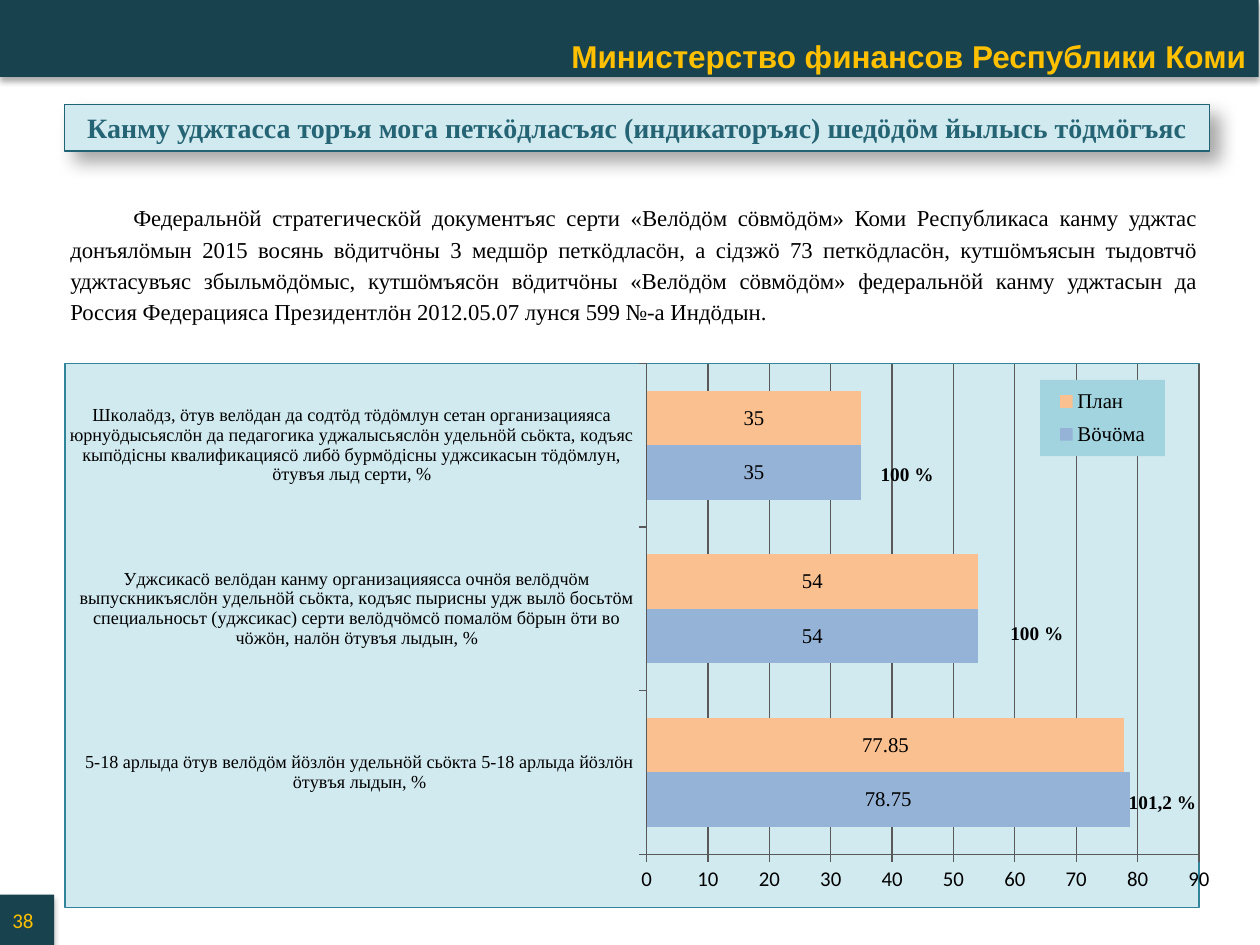
from dataclasses import dataclass

from lxml.etree import SubElement
from pptx import Presentation
from pptx.chart.data import CategoryChartData
from pptx.dml.color import RGBColor
from pptx.enum.chart import XL_CHART_TYPE, XL_LABEL_POSITION, XL_LEGEND_POSITION, XL_TICK_MARK
from pptx.enum.shapes import MSO_SHAPE
from pptx.enum.text import MSO_ANCHOR, PP_ALIGN
from pptx.oxml import parse_xml
from pptx.oxml.ns import nsdecls, qn
from pptx.util import Inches, Pt


@dataclass(frozen=True)
class Theme:
    dark: str = "18424E"
    gold: str = "FFC000"
    pale: str = "D1EAF0"
    title: str = "256474"
    title_line: str = "206375"
    chart_line: str = "31859B"
    legend: str = "A2D4E0"
    grid: str = "595959"
    text: str = "000000"
    plan: str = "FAC090"
    done: str = "95B3D7"
    serif: str = "Times New Roman"
    sans: str = "Calibri"
    header_font: str = "Arial"
    header_size: float = 18
    title_size: float = 16
    body_size: float = 13
    small_size: float = 12
    note_size: float = 11
    category_size: float = 10.5


THEME = Theme()
BAR_SHADOW = (32, 3.5, 2.2, 90)
TITLE_SHADOW = (35, 10.2, 8, 45)
CATEGORIES = (
    "5-18 арлыда ӧтув велӧдӧм йӧзлӧн удельнӧй сьӧкта 5-18 арлыда йӧзлӧн ӧтувъя лыдын, %",
    "Уджсикасӧ велӧдан канму организацияясса очнӧя велӧдчӧм выпускникъяслӧн удельнӧй сьӧкта, "
    "кодъяс пырисны удж вылӧ босьтӧм специальносьт (уджсикас) серти велӧдчӧмсӧ помалӧм бӧрын "
    "ӧти во чӧжӧн, налӧн ӧтувъя лыдын, %",
    "Школаӧдз, ӧтув велӧдан да содтӧд тӧдӧмлун сетан организацияяса юрнуӧдысьяслӧн да педагогика "
    "уджалысьяслӧн удельнӧй сьӧкта, кодъяс кыпӧдісны квалификациясӧ либӧ бурмӧдісны уджсикасын "
    "тӧдӧмлун, ӧтувъя лыд серти, %",
)
SERIES = (("Вӧчӧма", (78.75, 54, 35), THEME.done), ("План", (77.85, 54, 35), THEME.plan))
RATES = ((8.35, 3.34, 0.79, "101,2 %"), (7.41, 2, 0.71, "100 %"), (6.38, 0.74, 0.71, "100 %"))
BODY = (
    "Федеральнӧй стратегическӧй документъяс серти «Велӧдӧм сӧвмӧдӧм» Коми Республикаса канму "
    "уджтас донъялӧмын 2015 восянь вӧдитчӧны 3 медшӧр петкӧдласӧн, а сiдзжӧ 73 петкӧдласӧн, "
    "кутшӧмъясын тыдовтчӧ уджтасувъяс збыльмӧдӧмыс, кутшӧмъясӧн вӧдитчӧны «Велӧдӧм сӧвмӧдӧм» "
    "федеральнӧй канму уджтасын да Россия Федерацияса Президентлӧн 2012.05.07 лунся 599 №-а Индӧдын."
)


def rgb(color):
    return RGBColor.from_string(color)


def set_font(font, size, name=THEME.serif, color=THEME.text, bold=False):
    font.size, font.name, font.bold = Pt(size), name, bold
    font.color.rgb = rgb(color)


def write(box, text, align=PP_ALIGN.LEFT, anchor=MSO_ANCHOR.TOP, indent=0, spacing=None, **font):
    frame = box.text_frame
    frame.word_wrap = True
    frame.vertical_anchor = anchor
    para = frame.paragraphs[0]
    para.alignment = align
    if indent:
        para._p.get_or_add_pPr().set("indent", str(Inches(indent)))
    if spacing:
        para.line_spacing = spacing
    span = para.add_run()
    span.text = text
    set_font(span.font, **font)


def add_text(page, left, top, width, height, text, **style):
    box = page.shapes.add_textbox(Inches(left), Inches(top), Inches(width), Inches(height))
    write(box, text, **style)


def add_panel(page, left, top, width, height, fill, shadow, line=None):
    panel = page.shapes.add_shape(
        MSO_SHAPE.RECTANGLE, Inches(left), Inches(top), Inches(width), Inches(height))
    panel.fill.solid()
    panel.fill.fore_color.rgb = rgb(fill)
    if line:
        panel.line.color.rgb = rgb(line)
        panel.line.width = Pt(0.75)
    else:
        panel.line.fill.background()
    panel.shadow.inherit = False
    alpha, blur, distance, angle = shadow
    effects = panel._element.spPr.find(qn("a:effectLst"))
    outer = SubElement(effects, qn("a:outerShdw"), blurRad=str(Pt(blur)), dist=str(Pt(distance)),
                       dir=str(angle * 60000), algn="tl", rotWithShape="0")
    color = SubElement(outer, qn("a:srgbClr"), val=THEME.text)
    SubElement(color, qn("a:alpha"), val=str(alpha * 1000))
    return panel


def add_header(page, left, top, width, height):
    bar = add_panel(page, left, top, width, height, THEME.dark, BAR_SHADOW)
    bar.text_frame.margin_bottom = Inches(0.02)
    write(bar, "Министерство финансов Республики Коми", align=PP_ALIGN.RIGHT,
          anchor=MSO_ANCHOR.BOTTOM, size=THEME.header_size, name=THEME.header_font,
          color=THEME.gold, bold=True)


def add_title(page, left, top, width, height):
    panel = add_panel(page, left, top, width, height, THEME.pale, TITLE_SHADOW, THEME.title_line)
    write(panel, "Канму уджтасса торъя мога петкӧдласъяс (индикаторъяс) шедӧдӧм йылысь тӧдмӧгъяс",
          align=PP_ALIGN.CENTER, size=THEME.title_size, color=THEME.title, bold=True)


def add_page_number(page, left, top, width, height):
    panel = add_panel(page, left, top, width, height, THEME.dark, BAR_SHADOW)
    write(panel, "38", anchor=MSO_ANCHOR.MIDDLE, size=THEME.small_size, name=THEME.sans,
          color=THEME.gold)


def chart_fill(fill, line=None):
    border = (f'<a:ln w="{Pt(0.75)}"><a:solidFill><a:srgbClr val="{line}"/></a:solidFill></a:ln>'
              if line else "")
    return parse_xml(f'<c:spPr {nsdecls("c", "a")}><a:solidFill><a:srgbClr val="{fill}"/>'
                     f"</a:solidFill>{border}</c:spPr>")


def chart_layout(parent, position, x, y, w, h, inner=False):
    for old in parent.findall(qn("c:layout")):
        parent.remove(old)
    layout = parse_xml(f'<c:layout {nsdecls("c")}><c:manualLayout/></c:layout>')
    values = [("layoutTarget", "inner")] if inner else []
    values += [("xMode", "edge"), ("yMode", "edge"), ("x", x), ("y", y), ("w", w), ("h", h)]
    for tag, value in values:
        SubElement(layout[0], qn(f"c:{tag}"), val=str(value))
    parent.insert(position, layout)


def style_axes(chart):
    for axis, size, name in ((chart.category_axis, THEME.category_size, THEME.serif),
                             (chart.value_axis, THEME.small_size, THEME.sans)):
        set_font(axis.tick_labels.font, size, name)
        axis.major_tick_mark = XL_TICK_MARK.OUTSIDE
        axis.minor_tick_mark = XL_TICK_MARK.NONE
        axis.format.line.color.rgb = rgb(THEME.grid)
    chart.value_axis.minimum_scale, chart.value_axis.maximum_scale = 0, 90
    chart.value_axis.major_unit = 10
    chart.value_axis.major_gridlines.format.line.color.rgb = rgb(THEME.grid)


def add_indicators(page, left, top, width, height):
    data = CategoryChartData()
    data.categories = CATEGORIES
    for name, values, _ in SERIES:
        data.add_series(name, values)
    chart = page.shapes.add_chart(XL_CHART_TYPE.BAR_CLUSTERED, Inches(left), Inches(top),
                                  Inches(width), Inches(height), data).chart
    chart.has_title = False
    set_font(chart.font, THEME.header_size, THEME.sans)
    style_axes(chart)
    plot = chart.plots[0]
    plot.gap_width, plot.overlap, plot.vary_by_categories = 100, 0, False
    for series, (_, _, color) in zip(plot.series, SERIES):
        series.format.fill.solid()
        series.format.fill.fore_color.rgb = rgb(color)
        labels = series.data_labels
        labels.show_value, labels.position = True, XL_LABEL_POSITION.CENTER
        set_font(labels.font, THEME.small_size)
    chart.has_legend = True
    chart.legend.position = XL_LEGEND_POSITION.RIGHT
    chart.legend.include_in_layout = False
    set_font(chart.legend.font, THEME.small_size)

    chart_node = chart.element.find(qn("c:chart"))
    chart_node.addnext(chart_fill(THEME.pale, THEME.chart_line))
    chart_layout(chart_node.find(qn("c:plotArea")), 0, 0.517, 0, 0.487, 0.902, inner=True)
    legend = chart_node.find(qn("c:legend"))
    chart_layout(legend, 1, 0.86, 0.03, 0.11, 0.14)
    legend.find(qn("c:overlay")).addnext(chart_fill(THEME.legend))
    for x, y, note_width, text in RATES:
        add_text(page, left + x, top + y, note_width, 0.29, text, size=THEME.note_size, bold=True)


def main():
    deck = Presentation()
    deck.slide_width, deck.slide_height = Inches(10), Inches(7.5)
    page = deck.slides.add_slide(deck.slide_layouts[6])
    add_header(page, 0, -0.01, 9.99, 0.62)
    add_title(page, 0.51, 0.83, 9.09, 0.37)
    add_page_number(page, 0, 7.1, 0.43, 0.4)
    add_indicators(page, 0.51, 2.88, 9.09, 4.33)
    add_text(page, 0.46, 1.54, 9.13, 1.12, BODY, align=PP_ALIGN.JUSTIFY, indent=0.5,
             spacing=1.14, size=THEME.body_size)
    deck.save("out.pptx")


if __name__ == "__main__":
    main()
